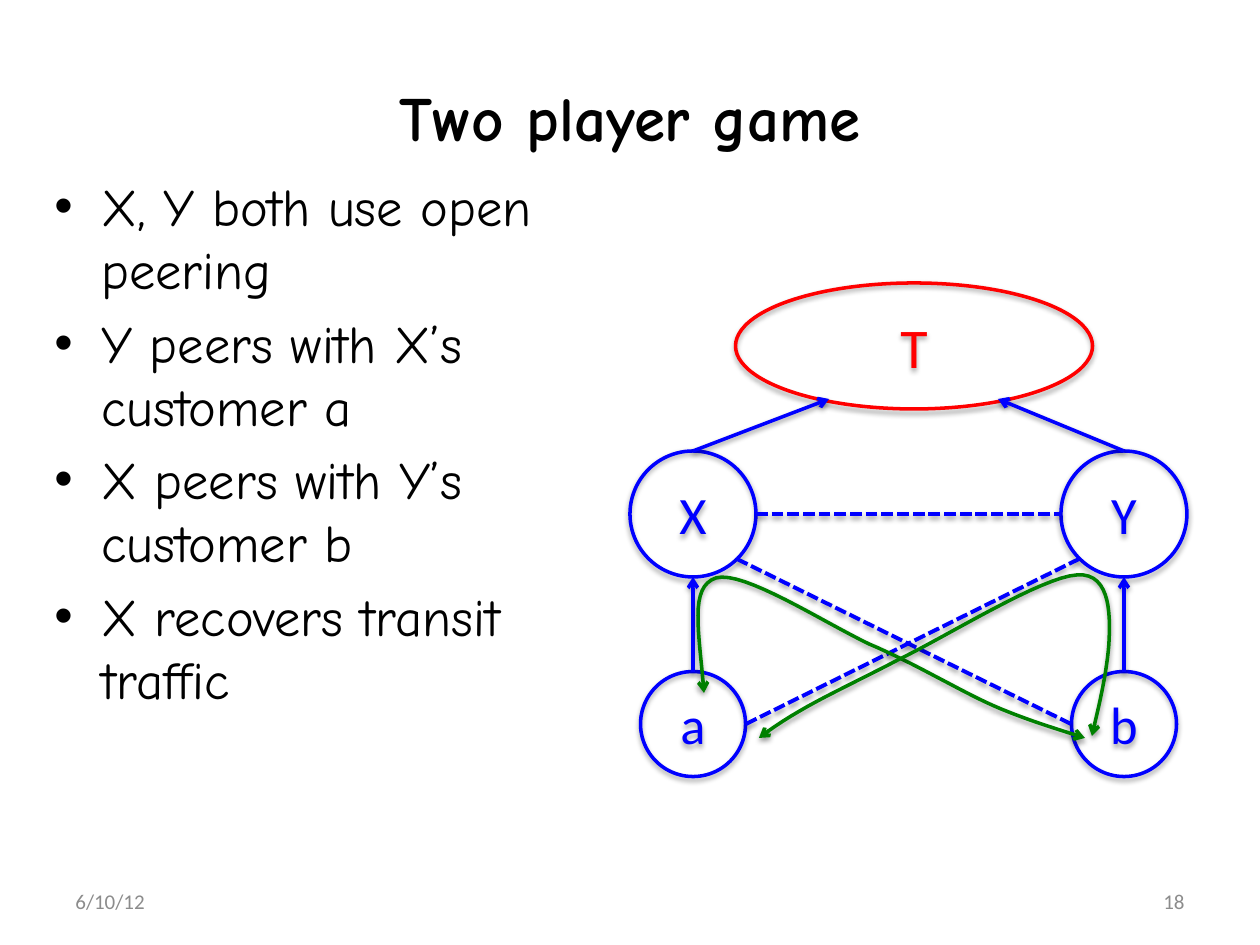
from lxml.etree import SubElement
from pptx import Presentation
from pptx.dml.color import RGBColor
from pptx.enum.dml import MSO_LINE
from pptx.enum.shapes import MSO_CONNECTOR, MSO_SHAPE
from pptx.enum.text import MSO_ANCHOR, PP_ALIGN
from pptx.oxml.ns import qn
from pptx.util import Pt

EMU_PER_PX = 914400 / 126
BLUE, RED, GREEN, BLACK, GRAY = "0000FF", "FF0000", "008000", "000000", "8C8C8C"


def px(length):
    return round(length * EMU_PER_PX)


def color(hex_text):
    return RGBColor.from_string(hex_text)


def bezier_points(start, curves, steps=16):
    """Points along a chain of cubic curves."""
    points = [start]
    for first, second, end in curves:
        for step in range(1, steps + 1):
            t = step / steps
            weights = ((1 - t) ** 3, 3 * t * (1 - t) ** 2, 3 * t * t * (1 - t), t ** 3)
            corners = (start, first, second, end)
            points.append(tuple(sum(w * c[axis] for w, c in zip(weights, corners))
                                for axis in (0, 1)))
        start = end
    return points


class SlideBuilder:
    heading_font = "Comic Neue"
    plain_font = "Calibri"

    def __init__(self, slide):
        self.slide = slide

    def format_text(self, text_frame, font, size, hex_text, align=PP_ALIGN.LEFT, bold=False):
        for paragraph in text_frame.paragraphs:
            paragraph.alignment = align
            for run in paragraph.runs:
                run.font.name, run.font.size, run.font.bold = font, Pt(size), bold
                run.font.color.rgb = color(hex_text)

    def title(self, text, left, top, width, height):
        shape = self.slide.shapes.title
        shape.left, shape.top, shape.width, shape.height = map(px, (left, top, width, height))
        shape.text_frame.text = text
        shape.text_frame.vertical_anchor = MSO_ANCHOR.MIDDLE
        self.format_text(shape.text_frame, self.heading_font, 36, BLACK, PP_ALIGN.CENTER, True)

    def text_box(self, text, left, top, width, height):
        shape = self.slide.shapes.add_textbox(*map(px, (left, top, width, height)))
        shape.text_frame.word_wrap = True
        shape.text_frame.text = text
        return shape.text_frame

    def bullets(self, items, left, top, width, height):
        text_frame = self.text_box("\n".join(items), left, top, width, height)
        self.format_text(text_frame, self.heading_font, 30, BLACK)
        for paragraph in text_frame.paragraphs:
            paragraph.space_before = Pt(6)
            properties = paragraph._p.get_or_add_pPr()
            properties.set("marL", str(px(47)))
            properties.set("indent", str(-px(47)))
            SubElement(properties, qn("a:buFont"), typeface="Arial")
            SubElement(properties, qn("a:buChar"), char="•")

    def footer(self, text, left, align):
        text_frame = self.text_box(text, left, 876, 294, 50)
        text_frame.vertical_anchor = MSO_ANCHOR.MIDDLE
        self.format_text(text_frame, self.plain_font, 12, GRAY, align)

    def outline(self, shape, hex_text, width=2, dashed=False, arrows=(), opacity=38, distance=1.6):
        """Line, arrowheads and soft shadow shared by all parts of the diagram."""
        shape.line.color.rgb = color(hex_text)
        shape.line.width = Pt(width)
        if dashed:
            shape.line.dash_style = MSO_LINE.SQUARE_DOT
        properties = shape._element.spPr
        for end in arrows:
            SubElement(properties.find(qn("a:ln")), qn(f"a:{end}"), type="arrow")
        effects = SubElement(properties, qn("a:effectLst"))
        shadow = SubElement(effects, qn("a:outerShdw"), blurRad=str(Pt(3.1)),
                            dist=str(Pt(distance)), dir="5400000", rotWithShape="0")
        shade = SubElement(shadow, qn("a:srgbClr"), val=BLACK)
        SubElement(shade, qn("a:alpha"), val=str(opacity * 1000))

    def node(self, label, center_x, center_y, width, height, hex_text=BLUE, size=30):
        box = (center_x - width / 2, center_y - height / 2, width, height)
        shape = self.slide.shapes.add_shape(MSO_SHAPE.OVAL, *map(px, box))
        shape.fill.background()
        self.outline(shape, hex_text, opacity=35, distance=1.8)
        shape.text_frame.text = label
        shape.text_frame.vertical_anchor = MSO_ANCHOR.MIDDLE
        self.format_text(shape.text_frame, self.plain_font, size, hex_text, PP_ALIGN.CENTER)

    def link(self, start, end, **style):
        connector = self.slide.shapes.add_connector(
            MSO_CONNECTOR.STRAIGHT, *map(px, (*start, *end)))
        self.outline(connector, BLUE, **style)

    def transit_link(self, start, end):
        self.link(start, end, arrows=("tailEnd",))

    def peering_link(self, start, end):
        self.link(start, end, width=2.25, dashed=True)

    def traffic_flow(self, start, curves):
        points = [(px(x), px(y)) for x, y in bezier_points(start, curves)]
        builder = self.slide.shapes.build_freeform(*points[0])
        builder.add_line_segments(points[1:], close=False)
        shape = builder.convert_to_shape()
        shape.fill.background()
        self.outline(shape, GREEN, arrows=("headEnd", "tailEnd"))


def main():
    presentation = Presentation()
    presentation.slide_width, presentation.slide_height = px(1260), px(945)
    builder = SlideBuilder(presentation.slides.add_slide(presentation.slide_layouts[5]))

    # Text
    builder.title("Two player game", 63, 38, 1134, 157)
    builder.bullets(["X, Y both use open peering", "Y peers with X’s customer a",
                     "X peers with Y’s customer b", "X recovers transit traffic"],
                    42, 168, 577, 677)
    builder.footer("6/10/12", 63, PP_ALIGN.LEFT)
    builder.footer("18", 903, PP_ALIGN.RIGHT)

    # Networks: transit provider, two players, their customers
    left_x, right_x, player_y, customer_y = 693, 1124, 514, 724
    builder.node("X", left_x, player_y, 126, 126)
    builder.node("T", 914, 346, 357, 126, RED, 32)
    builder.node("Y", right_x, player_y, 126, 126)
    builder.node("a", left_x, customer_y, 105, 105)
    builder.node("b", right_x, customer_y, 105, 105)

    # Transit links
    for x, provider_x in ((left_x, 829), (right_x, 998)):
        builder.transit_link((x, 451), (provider_x, 399))
        builder.transit_link((x, 672), (x, 577))

    # Peering links
    builder.peering_link((756, player_y), (1061, player_y))
    builder.peering_link((737, 559), (1071, customer_y))
    builder.peering_link((746, customer_y), (1079, 559))

    # Traffic between the customers
    builder.traffic_flow((704, 693), [
        ((699, 630), (689, 587), (716, 578)),
        ((743, 570), (823, 622), (869, 644)),
        ((916, 664), (958, 690), (994, 706)),
        ((1031, 722), (1070, 733), (1085, 738))])
    builder.traffic_flow((759, 738), [
        ((801, 706), (845, 688), (898, 660)),
        ((951, 634), (1042, 577), (1077, 575)),
        ((1113, 572), (1110, 622), (1109, 644)),
        ((1106, 682), (1095, 721), (1092, 736))])

    presentation.save("out.pptx")


if __name__ == "__main__":
    main()
